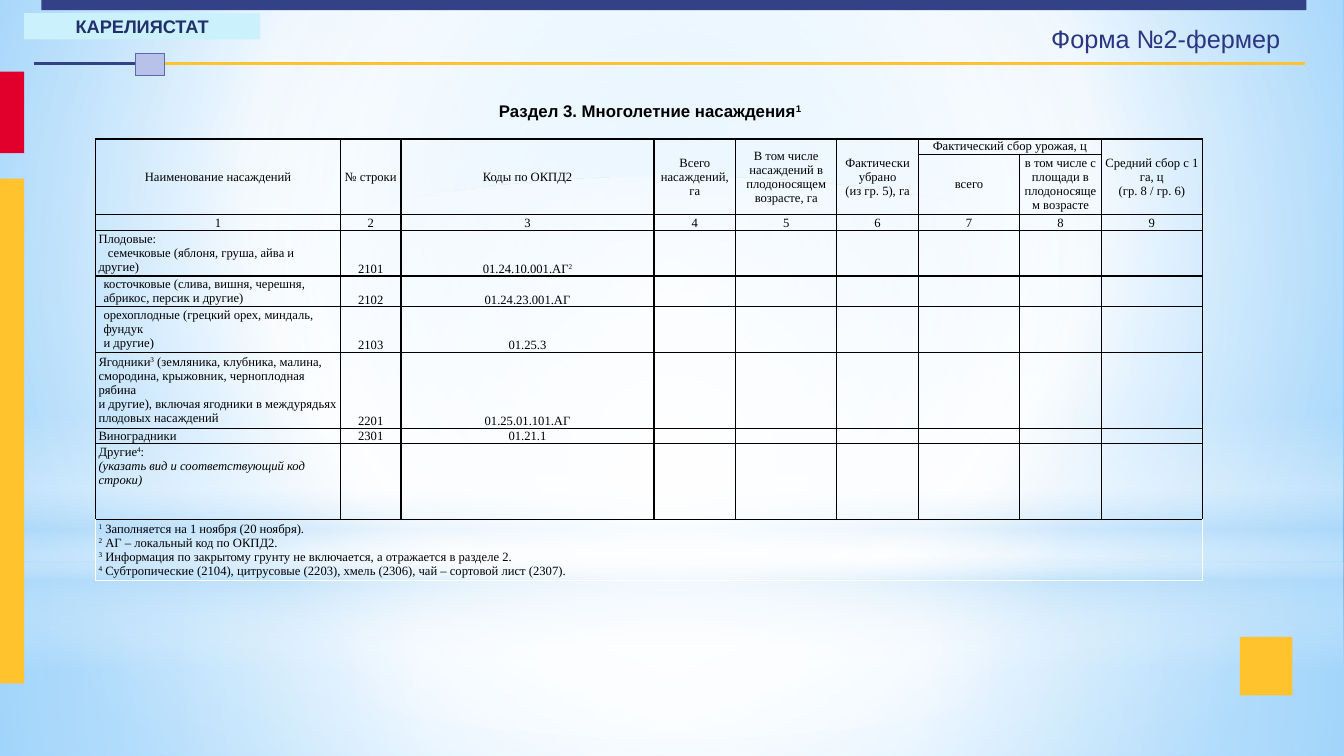
from lxml.etree import SubElement
from pptx import Presentation
from pptx.dml.color import RGBColor
from pptx.enum.shapes import MSO_CONNECTOR, MSO_SHAPE
from pptx.enum.text import MSO_ANCHOR as ANCHOR, PP_ALIGN as ALIGN
from pptx.oxml.ns import qn
from pptx.util import Pt

W, H = 960, 540
NAVY, GOLD, BLACK, WHITE = "334286", "FFC32E", "000000", "FFFFFF"
hex_color = RGBColor.from_string


def gradient(fill, owner, stops, to=None):
    """Fill with (percent, colour, opacity) stops: circular towards `to`, else top to bottom."""
    fill.gradient()
    grad = next(owner.iter(qn("a:gradFill")))
    grad.clear()
    stop_list = SubElement(grad, qn("a:gsLst"))
    for pos, color, alpha in stops:
        gs = SubElement(stop_list, qn("a:gs"), pos=str(pos * 1000))
        clr = SubElement(gs, qn("a:srgbClr"), val=color)
        SubElement(clr, qn("a:alpha"), val=str(alpha * 1000))
    if to:
        circle = SubElement(grad, qn("a:path"), {"path": "circle"})
        SubElement(circle, qn("a:fillToRect"), {k: str(v * 1000) for k, v in zip("ltrb", to)})
    else:
        SubElement(grad, qn("a:lin"), ang="5400000", scaled="0")


def write(tf, text, size, font, color, align=ALIGN.LEFT, bold=None):
    """Write one paragraph per line; text between carets is superscript."""
    for i, line in enumerate(text.split("\n")):
        p = tf.add_paragraph() if i else tf.paragraphs[0]
        p.alignment = align
        p.font.size, p.font.name, p.font.bold = Pt(size), font, bold
        p.font.color.rgb = hex_color(color)
        for j, part in enumerate(line.split("^")):
            if part:
                r = p.add_run()
                r.text = part
                if j % 2:
                    r.font._element.set("baseline", "30000")


prs = Presentation()
prs.slide_width, prs.slide_height = Pt(W), Pt(H)
s = prs.slides.add_slide(prs.slide_layouts[6])

# Background glow
gradient(s.background.fill, s._element,
         [(0, "9AD5FF", 100), (55, WHITE, 100), (100, "5BB9FF", 100)], (20, 10, 20, 60))
CENTER = (50, 50, 50, 50)
PALE = "B4DCFA"
glows = [
    (MSO_SHAPE.RECTANGLE, 402, 138, [(0, WHITE, 91), (37, WHITE, 76), (100, PALE, 79)], CENTER),
    (MSO_SHAPE.RECTANGLE, 0, 402, [(0, WHITE, 89), (48, WHITE, 62), (100, PALE, 79)], CENTER),
    (MSO_SHAPE.RECTANGLE, 296.6, 180, [(0, WHITE, 0), (29, WHITE, 30), (45, PALE, 40),
                                       (55, WHITE, 26), (65, PALE, 60), (100, WHITE, 0)], None),
    (MSO_SHAPE.OVAL, 126, 402, [(0, WHITE, 100), (56, WHITE, 0)], CENTER),
]
for kind, top, height, stops, to in glows:
    sp = s.shapes.add_shape(kind, 0, Pt(top), Pt(W), Pt(height))
    sp.shadow.inherit = False
    sp.line.fill.background()
    gradient(sp.fill, sp._element, stops, to)

# Header rule and coloured blocks
for x1, x2, color in [(24, 113, NAVY), (113, 932.5, GOLD)]:
    rule = s.shapes.add_connector(MSO_CONNECTOR.STRAIGHT, Pt(x1), Pt(45.2), Pt(x2), Pt(45.2))
    rule.line.color.rgb = hex_color(color)
    rule.line.width = Pt(2)
    SubElement(rule._element.spPr, qn("a:effectLst"))

blocks = [
    (29.5, 0, 903.6, 7.2, NAVY, None),
    (0, 51.1, 17.3, 58.3, "E1002B", None),
    (0, 127.5, 17.3, 360.7, GOLD, None),
    (97, 38.2, 20.8, 15.8, "B8C2E9", "5968B0"),
    (885.6, 455, 37.5, 41.8, GOLD, None),
    (17.3, 9.4, 168.5, 18.7, "CBF1FD", None),
]
for x, y, w, h, color, outline in blocks:
    sp = s.shapes.add_shape(MSO_SHAPE.RECTANGLE, Pt(x), Pt(y), Pt(w), Pt(h))
    sp.shadow.inherit = False
    sp.fill.solid()
    sp.fill.fore_color.rgb = hex_color(color)
    if outline:
        sp.line.color.rgb = hex_color(outline)
        sp.line.width = Pt(0.75)
    else:
        sp.line.fill.background()
tf = sp.text_frame
tf.margin_top = tf.margin_bottom = Pt(1.4)
tf.vertical_anchor = ANCHOR.MIDDLE
write(tf, "КАРЕЛИЯСТАТ", 13, "Arial", "21306A", ALIGN.CENTER, True)

# Titles
titles = [
    (743.8, 13, 189.4, 29, "Форма №2-фермер", 18, "2B3583", ALIGN.LEFT, None),
    (129.6, 67, 669.6, 24, "Раздел 3. Многолетние насаждения^1^", 12, BLACK, ALIGN.CENTER, True),
]
for x, y, w, h, text, size, color, align, bold in titles:
    tf = s.shapes.add_textbox(Pt(x), Pt(y), Pt(w), Pt(h)).text_frame
    tf.word_wrap = True
    tf.vertical_anchor = ANCHOR.MIDDLE
    write(tf, text, size, "Arial", color, align, bold)

# Table of perennial plantings
col_widths = [175, 43.2, 180.8, 58.2, 72.4, 58.2, 72.4, 58.2, 72.4]
row_heights = [10.8, 42.9, 11.2, 32.2, 22, 32.2, 54.3, 10.8, 54.3, 43.5]
rows = [
    ["Наименование насаждений", "№ строки", "Коды по ОКПД2", "Всего насаждений, га",
     "В том числе насаждений в плодоносящем возрасте, га", "Фактически убрано\n(из гр. 5), га",
     "Фактический сбор урожая, ц", "", "Средний сбор с 1 га, ц\n(гр. 8 / гр. 6)"],
    [""] * 6 + ["всего", "в том числе с площади в плодоносящем возрасте"],
    [str(n) for n in range(1, 10)],
    ["Плодовые:\nсемечковые (яблоня, груша, айва и другие)", "2101", "01.24.10.001.АГ^2^"],
    ["косточковые (слива, вишня, черешня, абрикос, персик и другие)", "2102", "01.24.23.001.АГ"],
    ["орехоплодные (грецкий орех, миндаль, фундук\nи другие)", "2103", "01.25.3"],
    ["Ягодники^3^ (земляника, клубника, малина, смородина, крыжовник, черноплодная рябина\n"
     "и другие), включая ягодники в междурядьях плодовых насаждений", "2201", "01.25.01.101.АГ"],
    ["Виноградники", "2301", "01.21.1"],
    ["Другие^4^:\n(указать вид и соответствующий код строки)"],
    ["^1^ Заполняется на 1 ноября (20 ноября).\n^2^ АГ – локальный код по ОКПД2.\n"
     "^3^ Информация по закрытому грунту не включается, а отражается в разделе 2.\n"
     "^4^ Субтропические (2104), цитрусовые (2203), хмель (2306), чай – сортовой лист (2307)."],
]
HEADER_ROWS, OTHER_ROW, NOTES_ROW = 3, 8, 9
frame = s.shapes.add_table(len(rows), len(col_widths), Pt(68.2), Pt(99.3),
                           Pt(sum(col_widths)), Pt(sum(row_heights)))
table = frame.table
table.first_row = table.horz_banding = False
for column, width in zip(table.columns, col_widths):
    column.width = Pt(width)
for row, height in zip(table.rows, row_heights):
    row.height = Pt(height)

for r, texts in enumerate(rows):
    for c in range(len(col_widths)):
        cell = table.cell(r, c)
        cell.margin_left = Pt(5.8 if c == 0 and r in (4, 5) else 2.2)
        cell.margin_right = Pt(2.2)
        cell.margin_top = cell.margin_bottom = 0
        cell.vertical_anchor = ANCHOR.BOTTOM if r >= HEADER_ROWS and c else ANCHOR.MIDDLE
        tcPr = cell._tc.get_or_add_tcPr()
        for side in ("lnL", "lnR", "lnT", "lnB"):
            color = WHITE if r == NOTES_ROW and side != "lnT" else BLACK
            ln = SubElement(tcPr, qn("a:" + side), w=str(Pt(1)))
            SubElement(SubElement(ln, qn("a:solidFill")), qn("a:srgbClr"), val=color)
        cell.fill.background()
        text = texts[c] if c < len(texts) else ""
        align = ALIGN.CENTER if c or r < HEADER_ROWS else ALIGN.LEFT
        write(cell.text_frame, text, 9, "Times New Roman", BLACK, align)
        if not text:
            SubElement(cell.text_frame.paragraphs[0]._p, qn("a:endParaRPr"), sz="900")

pome_fruit = table.cell(HEADER_ROWS, 0).text_frame.paragraphs[1]
pome_fruit._p.get_or_add_pPr().set("indent", str(Pt(6.75)))
other = table.cell(OTHER_ROW, 0)
other.vertical_anchor = ANCHOR.TOP
other.margin_top = Pt(1)
other.text_frame.paragraphs[1].font.italic = True

for c in (0, 1, 2, 3, 4, 5, 8):
    table.cell(0, c).merge(table.cell(1, c))
table.cell(0, 6).merge(table.cell(0, 7))
table.cell(NOTES_ROW, 0).merge(table.cell(NOTES_ROW, 8))

prs.save("out.pptx")
